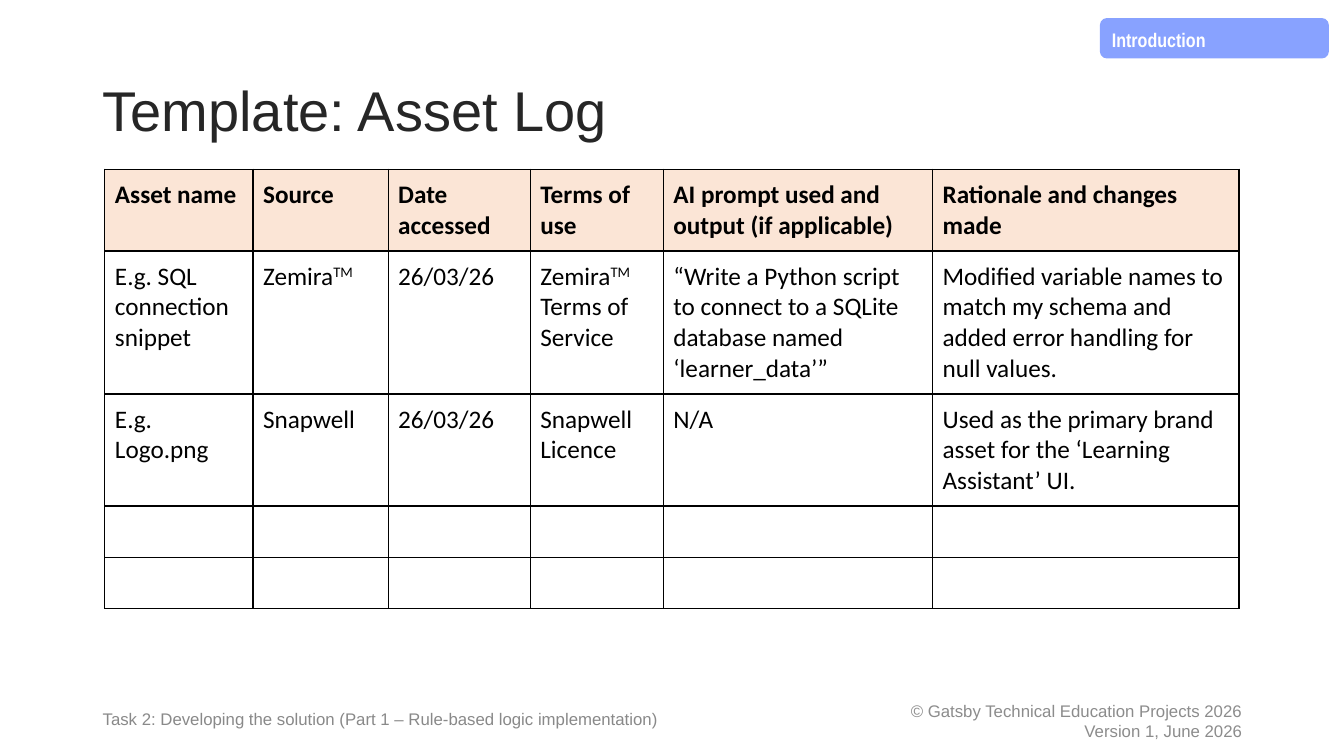
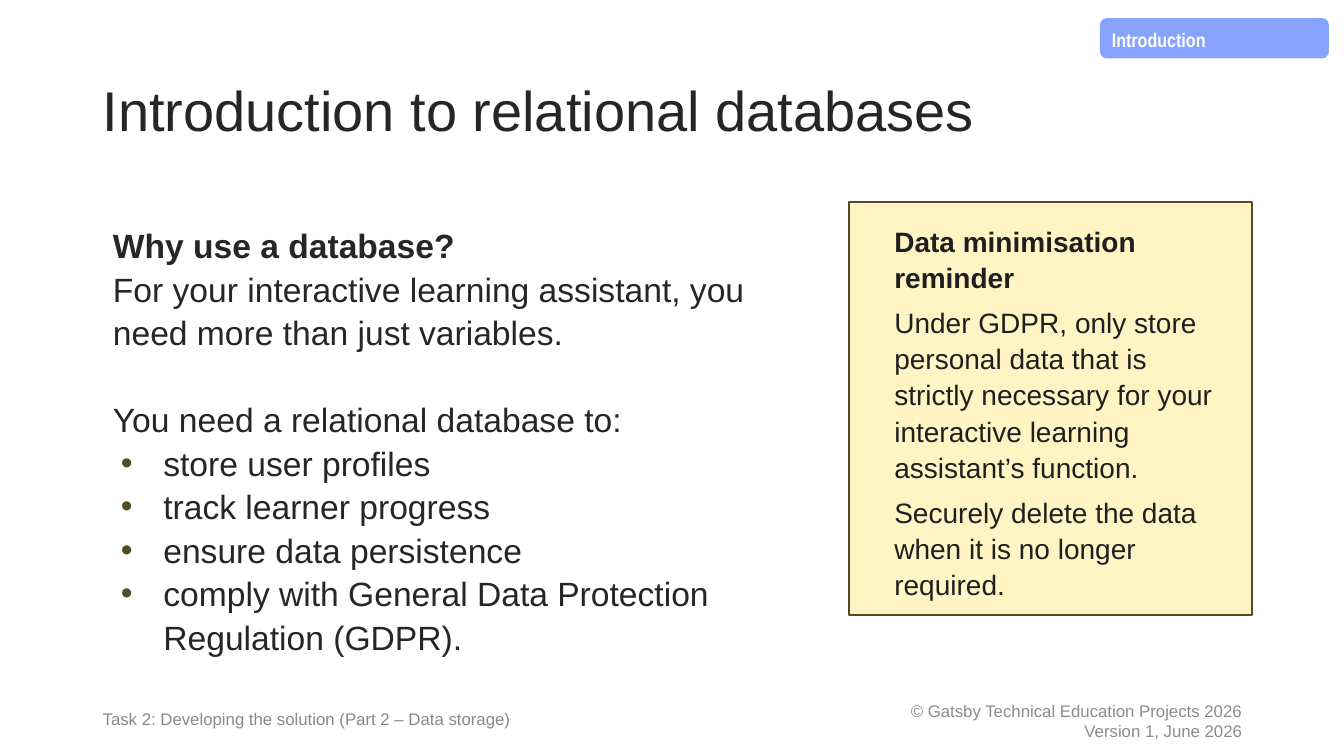
from lxml.etree import SubElement
from pptx import Presentation
from pptx.dml.color import RGBColor
from pptx.enum.shapes import MSO_SHAPE
from pptx.enum.text import MSO_ANCHOR, PP_ALIGN
from pptx.oxml.ns import qn
from pptx.util import Inches, Pt

COLOURS = {
    "title": "262626",
    "body": "262626",
    "reminder": "1F1F1F",
    "footer": "898989",
    "copyright": "8C8C8C",
    "white": "FFFFFF",
    "black": "000000",
    "tag": "88A2FF",
    "header": "FBE5D6",
    "note": "FFF5C4",
    "olive": "534C29",
}
BODY_SPACING = 1.08
COPYRIGHT = ["© Gatsby Technical Education Projects 2026", "Version 1, June 2026"]

COLUMN_WIDTHS = [1.47, 1.34, 1.41, 1.32, 2.67, 3.04]
ROW_HEIGHTS = [0.81, 1.42, 1.11, 0.51, 0.51]
# Text between carets is raised.
ASSET_ROWS = [
    ["Asset name", "Source", "Date accessed", "Terms of use",
     "AI prompt used and output (if applicable)", "Rationale and changes made"],
    ["E.g. SQL connection snippet", "Zemira^TM^", "26/03/26", "Zemira^TM^ Terms of Service",
     "“Write a Python script to connect to a SQLite database named ‘learner_data’”",
     "Modified variable names to match my schema and added error handling for null values."],
    ["E.g. Logo.png", "Snapwell", "26/03/26", "Snapwell Licence", "N/A",
     "Used as the primary brand asset for the ‘Learning Assistant’ UI."],
    [""] * 6,
    [""] * 6,
]
REASONS = ["store user profiles", "track learner progress", "ensure data persistence",
           "comply with General Data Protection Regulation (GDPR)."]
REMINDER = [
    "Data minimisation reminder",
    "Under GDPR, only store personal data that is strictly necessary for your "
    "interactive learning assistant’s function.",
    "Securely delete the data when it is no longer required.",
]


def colour(name):
    return RGBColor.from_string(COLOURS[name])


class SlideBuilder:
    """Holds the deck, its style and the slide being filled."""

    def __init__(self):
        self.deck = Presentation()
        self.deck.slide_width = Inches(13.33)
        self.deck.slide_height = Inches(7.5)
        self.slide = None

    def start(self, title, footer):
        """Add a slide with its title, section tag and footers."""
        self.slide = self.deck.slides.add_slide(self.deck.slide_layouts[6])
        self.text((0.92, 0.4, 11.5, 1.45), [title], 40, "title", spacing=0.9)
        self.text((7.92, 6.95, 4.5, 0.4), COPYRIGHT, 12, "copyright",
                  align=PP_ALIGN.RIGHT, spacing=1)
        self.text((0.92, 6.95, 6.26, 0.34), [footer], 12, "footer")
        tag = self.panel((10.91, 0.18, 2.27, 0.4), "tag",
                         shape=MSO_SHAPE.FLOWCHART_ALTERNATE_PROCESS)
        self.fill_frame(tag.text_frame, ["Introduction"], 14, "white",
                        font="Arial Narrow", bold_first=True, anchor=MSO_ANCHOR.MIDDLE)

    def style(self, paragraph, size, ink, font="Arial", bold=False):
        for span in paragraph.runs:
            span.font.size = Pt(size)
            span.font.name = font
            span.font.bold = bold
            span.font.color.rgb = colour(ink)

    def fill_frame(self, frame, lines, size, ink, font="Arial", bold_first=False,
                   align=PP_ALIGN.LEFT, spacing=BODY_SPACING, anchor=MSO_ANCHOR.TOP):
        frame.word_wrap = True
        frame.vertical_anchor = anchor
        frame.text = "\n".join(lines)
        for index, paragraph in enumerate(frame.paragraphs):
            paragraph.alignment = align
            paragraph.line_spacing = spacing
            self.style(paragraph, size, ink, font, bold_first and index == 0)
        return frame.paragraphs

    def text(self, place, lines, size, ink, **options):
        box = self.slide.shapes.add_textbox(*map(Inches, place))
        self.fill_frame(box.text_frame, lines, size, ink, anchor=MSO_ANCHOR.MIDDLE, **options)

    def panel(self, place, fill, line=None, shape=MSO_SHAPE.RECTANGLE):
        box = self.slide.shapes.add_shape(shape, *map(Inches, place))
        box.shadow.inherit = False
        box.fill.solid()
        box.fill.fore_color.rgb = colour(fill)
        if line:
            box.line.color.rgb = colour(line)
            box.line.width = Pt(1.5)
        else:
            box.line.fill.background()
        return box

    def text_panel(self, place, lines, size, ink, fill, line=None):
        """Add a panel with wide margins and a bold first line."""
        frame = self.panel(place, fill, line).text_frame
        frame.margin_left = frame.margin_right = Inches(0.2)
        frame.margin_top = frame.margin_bottom = Inches(0.2)
        return self.fill_frame(frame, lines, size, ink, bold_first=True)

    def indent(self, paragraph, left, first=0):
        properties = paragraph._p.get_or_add_pPr()
        properties.set("marL", str(Inches(left)))
        properties.set("indent", str(Inches(first)))
        return properties

    def bullet(self, paragraph):
        properties = self.indent(paragraph, 0.5, -0.42)
        tint = SubElement(properties, qn("a:buClr"))
        SubElement(tint, qn("a:srgbClr"), val=COLOURS["olive"])
        SubElement(properties, qn("a:buFont"), typeface="Arial")
        SubElement(properties, qn("a:buChar"), char="•")

    def borders(self, cell):
        properties = cell._tc.get_or_add_tcPr()
        for side in ("lnL", "lnR", "lnT", "lnB"):
            edge = SubElement(properties, qn(f"a:{side}"), w=str(Pt(1)))
            solid = SubElement(edge, qn("a:solidFill"))
            SubElement(solid, qn("a:srgbClr"), val=COLOURS["black"])

    def cell(self, cell, text, is_header):
        cell.margin_left = cell.margin_right = Inches(0.1)
        cell.margin_top = cell.margin_bottom = Inches(0.1)
        self.borders(cell)
        if is_header:
            cell.fill.solid()
            cell.fill.fore_color.rgb = colour("header")
        else:
            cell.fill.background()
        paragraph = cell.text_frame.paragraphs[0]
        paragraph.font.size = Pt(18)
        for index, part in enumerate(text.split("^")):
            if part:
                span = paragraph.add_run()
                span.text = part
                if index % 2:
                    span._r.get_or_add_rPr().set("baseline", "30000")
        self.style(paragraph, 18, "black", "Calibri", is_header)

    def table(self, left, top, widths, heights, rows):
        frame = self.slide.shapes.add_table(
            len(rows), len(widths), Inches(left), Inches(top),
            Inches(sum(widths)), Inches(sum(heights)))
        table = frame.table
        table.horz_banding = False
        table.first_row = False
        for column, width in zip(table.columns, widths):
            column.width = Inches(width)
        for index, (row, height, texts) in enumerate(zip(table.rows, heights, rows)):
            row.height = Inches(height)
            for cell, text in zip(row.cells, texts):
                self.cell(cell, text, index == 0)


def add_asset_log(builder):
    builder.start("Template: Asset Log",
                  "Task 2: Developing the solution (Part 1 – Rule-based logic implementation)")
    builder.table(1.04, 1.68, COLUMN_WIDTHS, ROW_HEIGHTS, ASSET_ROWS)


def add_databases(builder):
    builder.start("Introduction to relational databases",
                  "Task 2: Developing the solution (Part 2 – Data storage)")
    opening = ["Why use a database?",
               "For your interactive learning assistant, you need more than just variables.",
               "You need a relational database to:"]
    paragraphs = builder.text_panel((0.92, 2, 7.11, 4.76), opening + REASONS, 24, "body", "white")
    paragraphs[2].space_before = Pt(31)
    for paragraph in paragraphs[len(opening):]:
        builder.bullet(paragraph)

    paragraphs = builder.text_panel((8.42, 2, 4, 4.1), REMINDER, 20, "reminder", "note", "olive")
    for paragraph in paragraphs:
        builder.indent(paragraph, 0.25)
    for paragraph in paragraphs[:-1]:
        paragraph.space_after = Pt(6)


def main():
    builder = SlideBuilder()
    add_asset_log(builder)
    add_databases(builder)
    builder.deck.save("out.pptx")


if __name__ == "__main__":
    main()
